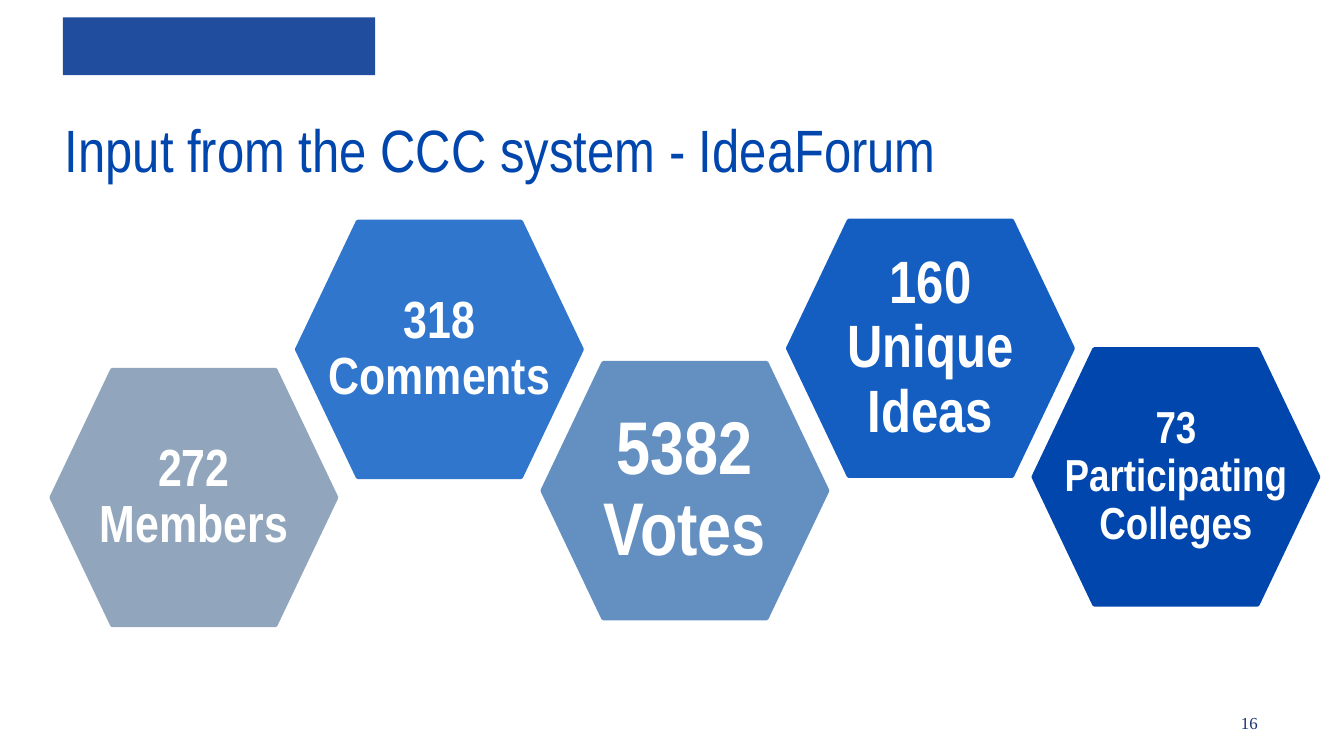
from pptx import Presentation
from pptx import util as u
from pptx.dml.color import RGBColor
from pptx.enum import shapes, text

WHITE = RGBColor(0xFF, 0xFF, 0xFF)
ROYAL = RGBColor(0x00, 0x46, 0xAD)
BANNER = RGBColor(0x20, 0x4D, 0x9E)
NAVY = RGBColor(0x1B, 0x30, 0x75)
GREY_BLUE = RGBColor(0x91, 0xA6, 0xBC)
SKY = RGBColor(0x30, 0x76, 0xCD)
STEEL = RGBColor(0x64, 0x8F, 0xC1)
COBALT = RGBColor(0x14, 0x5E, 0xC1)

TITLE = "Input from the CCC system - IdeaForum"
PAGE_NUMBER = "16"
STATISTICS = [
    ("272 Members", 6.99, 28, GREY_BLUE),
    ("318 Comments", 4.19, 28, SKY),
    ("5382 Votes", 6.86, 40, STEEL),
    ("160 Unique Ideas", 4.17, 32, COBALT),
    ("73 Participating Colleges", 6.6, 24, ROYAL),
]
FIRST_LEFT, PITCH = 0.97, 4.64
HEX_WIDTH, HEX_HEIGHT, HEX_INDENT = 5.39, 4.83, 1.15


def write(shape, content, size, color, font="Arial Narrow", bold=False,
          align=text.PP_ALIGN.LEFT, anchor=text.MSO_ANCHOR.TOP, spacing=1.0):
    frame = shape.text_frame
    frame.text = content
    frame.word_wrap = True
    frame.auto_size = text.MSO_AUTO_SIZE.NONE
    frame.vertical_anchor = anchor
    paragraph = frame.paragraphs[0]
    paragraph.alignment = align
    paragraph.line_spacing = spacing
    paragraph.space_before = u.Pt(0)
    paragraph.font.name = font
    paragraph.font.size = u.Pt(size)
    paragraph.font.bold = bold
    paragraph.font.color.rgb = color


def paint(shape, color):
    shape.shadow.inherit = False
    shape.fill.solid()
    shape.fill.fore_color.rgb = color


def add_hexagon(slide, left, top, color):
    right, bottom, middle = left + HEX_WIDTH, top + HEX_HEIGHT, top + HEX_HEIGHT / 2
    corners = [
        (left + HEX_INDENT, top), (right - HEX_INDENT, top), (right, middle),
        (right - HEX_INDENT, bottom), (left + HEX_INDENT, bottom),
    ]
    builder = slide.shapes.build_freeform(u.Cm(left), u.Cm(middle))
    builder.add_line_segments([(u.Cm(x), u.Cm(y)) for x, y in corners], close=True)
    hexagon = builder.convert_to_shape()
    paint(hexagon, color)
    hexagon.line.color.rgb = color
    hexagon.line.width = u.Pt(2)
    frame = hexagon.text_frame
    frame.margin_left = frame.margin_right = u.Cm(0.48)
    frame.margin_top = frame.margin_bottom = u.Cm(0.46)
    return hexagon


presentation = Presentation()
presentation.slide_width = u.Cm(25.4)
presentation.slide_height = u.Cm(14.29)
slide = presentation.slides.add_slide(presentation.slide_layouts[5])

banner = slide.shapes.add_shape(
    shapes.MSO_SHAPE.RECTANGLE, u.Cm(1.19), u.Cm(0.33), u.Cm(5.9), u.Cm(1.09))
paint(banner, BANNER)
banner.line.fill.background()

title = slide.shapes.title
title.left, title.top = u.Cm(0.97), u.Cm(2.01)
title.width, title.height = u.Cm(23.93), u.Cm(1.63)
write(title, TITLE, 32, ROYAL)

for index, (label, top, size, color) in enumerate(STATISTICS):
    hexagon = add_hexagon(slide, FIRST_LEFT + index * PITCH, top, color)
    write(hexagon, label, size, WHITE, bold=True, align=text.PP_ALIGN.CENTER,
          anchor=text.MSO_ANCHOR.MIDDLE, spacing=0.9)

page_number = slide.shapes.add_textbox(u.Cm(20.24), u.Cm(13.34), u.Cm(3.78), u.Cm(0.64))
write(page_number, PAGE_NUMBER, 9, NAVY, font="Times New Roman", align=text.PP_ALIGN.RIGHT)

presentation.save("out.pptx")
